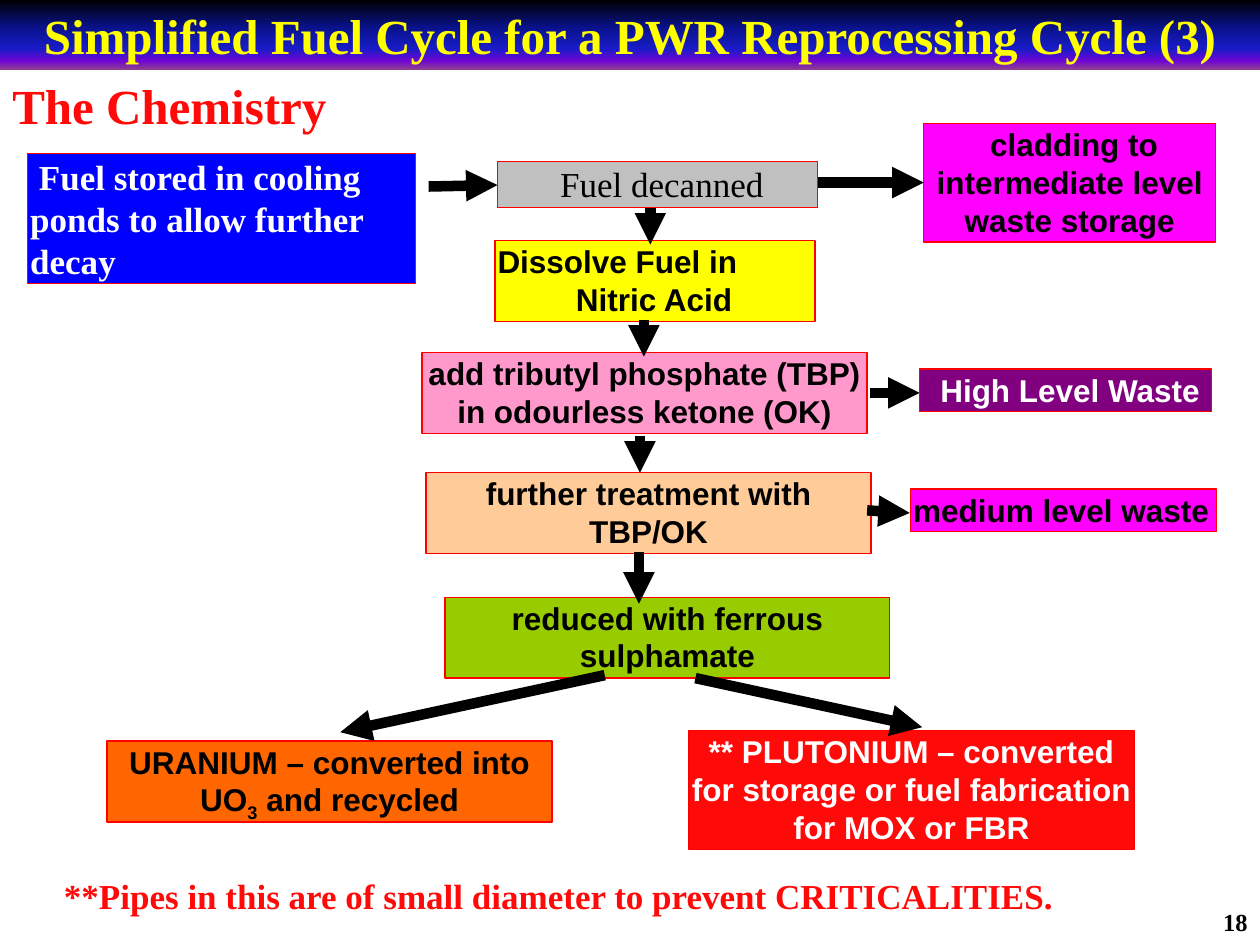
import pptx
import pptx.dml.color
import pptx.enum.shapes
import pptx.enum.text
import pptx.oxml
import pptx.oxml.ns
import pptx.util

Cm = pptx.util.Cm
Pt = pptx.util.Pt
RGBColor = pptx.dml.color.RGBColor
Align = pptx.enum.text.PP_ALIGN

BLACK = RGBColor(0x00, 0x00, 0x00)
WHITE = RGBColor(0xFF, 0xFF, 0xFF)
RED = RGBColor(0xFF, 0x00, 0x00)
BRIGHT_RED = RGBColor(0xFF, 0x09, 0x09)
YELLOW = RGBColor(0xFF, 0xFF, 0x00)
BLUE = RGBColor(0x00, 0x00, 0xFF)
GREY = RGBColor(0xC0, 0xC0, 0xC0)
MAGENTA = RGBColor(0xFF, 0x00, 0xFF)
PINK = RGBColor(0xFF, 0x99, 0xCC)
PEACH = RGBColor(0xFF, 0xCC, 0x99)
GREEN = RGBColor(0x99, 0xCC, 0x00)
PURPLE = RGBColor(0x80, 0x00, 0x80)
ORANGE = RGBColor(0xFF, 0x66, 0x00)
BANNER_STOPS = [
    (0, RGBColor(0x00, 0x00, 0x00)),
    (40, RGBColor(0x0A, 0x12, 0x8C)),
    (70, RGBColor(0x18, 0x1C, 0xC7)),
    (88, RGBColor(0x70, 0x05, 0xD4)),
    (100, RGBColor(0x8C, 0x3D, 0x91)),
]

SERIF = "Times New Roman"
SANS = "Arial"
STEP_WIDTH, STEP_HEIGHT = 8.97, 1.63


class FlowPage:
    """Holds the style and the slide being drawn."""

    def __init__(self, deck):
        self.page = deck.slides.add_slide(deck.slide_layouts[5])

    def style(self, para, size, color, name=SANS, bold=True, align=Align.CENTER):
        para.alignment = align
        para.font.size = Pt(size)
        para.font.name = name
        para.font.bold = bold
        para.font.color.rgb = color

    def title(self, text, height):
        box = self.page.shapes.title
        box.left, box.top, box.width, box.height = Cm(0), Cm(0), Cm(25.4), Cm(height)
        stops = "".join(
            f'<a:gs pos="{position * 1000}"><a:srgbClr val="{color}"/></a:gs>'
            for position, color in BANNER_STOPS
        )
        box._element.spPr.append(pptx.oxml.parse_xml(
            f'<a:gradFill {pptx.oxml.ns.nsdecls("a")}><a:gsLst>{stops}</a:gsLst>'
            '<a:lin ang="5400000" scaled="1"/></a:gradFill>'
        ))
        frame = box.text_frame
        frame.text = text
        frame.auto_size = pptx.enum.text.MSO_AUTO_SIZE.NONE
        frame.vertical_anchor = pptx.enum.text.MSO_ANCHOR.MIDDLE
        self.style(frame.paragraphs[0], 28, YELLOW, SERIF)

    def label(self, text, left, top, width, height, size, color, align=Align.LEFT):
        box = self.page.shapes.add_textbox(Cm(left), Cm(top), Cm(width), Cm(height))
        box.text_frame.word_wrap = True
        box.text_frame.text = text
        self.style(box.text_frame.paragraphs[0], size, color, SERIF, align=align)

    def step(self, text, fill, left, top, width=STEP_WIDTH, height=STEP_HEIGHT,
             color=BLACK, size=18, **style):
        box = self.page.shapes.add_shape(
            pptx.enum.shapes.MSO_SHAPE.RECTANGLE,
            Cm(left), Cm(top), Cm(width), Cm(height))
        box.shadow.inherit = False
        box.fill.solid()
        box.fill.fore_color.rgb = fill
        box.line.color.rgb = RED
        box.line.width = Pt(0.75)
        frame = box.text_frame
        frame.word_wrap = True
        frame.auto_size = pptx.enum.text.MSO_AUTO_SIZE.SHAPE_TO_FIT_TEXT
        frame.vertical_anchor = pptx.enum.text.MSO_ANCHOR.TOP
        frame.margin_left = frame.margin_right = Cm(0.05)
        frame.margin_top = frame.margin_bottom = Cm(0.03)
        frame.text = text
        for para in frame.paragraphs:
            self.style(para, size, color, **style)
        return frame

    def arrow(self, start_x, start_y, end_x, end_y):
        line = self.page.shapes.add_connector(
            pptx.enum.shapes.MSO_CONNECTOR.STRAIGHT,
            Cm(start_x), Cm(start_y), Cm(end_x), Cm(end_y))
        line.line.color.rgb = BLACK
        line.line.width = Pt(6)
        namespace = pptx.oxml.ns.nsdecls("a")
        line.line._get_or_add_ln().append(
            pptx.oxml.parse_xml(f'<a:tailEnd {namespace} type="triangle"/>'))
        line._element.spPr.append(pptx.oxml.parse_xml(f"<a:effectLst {namespace}/>"))


def main():
    deck = pptx.Presentation()
    deck.slide_width, deck.slide_height = Cm(25.4), Cm(19.05)
    flow = FlowPage(deck)

    # Headings, footnote and page number
    flow.title("Simplified Fuel Cycle for a PWR Reprocessing Cycle (3)", 1.4)
    flow.label("The Chemistry", 0, 1.4, 7.2, 1.68, 28, BRIGHT_RED)
    flow.label("**Pipes in this are of small diameter to prevent CRITICALITIES.",
               1.04, 17.5, 23.5, 1.12, 20, BRIGHT_RED)
    flow.label("18", 19.48, 18.16, 5.92, 0.85, 14, BLACK, Align.RIGHT)

    # Fuel preparation
    flow.step(" Fuel stored in cooling ponds to allow further decay", BLUE,
              0.56, 3.1, 7.82, 2.62, WHITE, 20, name=SERIF, align=Align.LEFT)
    flow.step(" Fuel decanned", GREY, 10.03, 3.25, 6.45, 0.94,
              size=20, name=SERIF, bold=False)
    dissolve = flow.step("Dissolve Fuel in\nNitric Acid", YELLOW,
                         9.98, 4.85, 6.45, align=Align.LEFT)
    dissolve.paragraphs[1]._p.get_or_add_pPr().set("marL", str(Cm(1.58)))

    # Chemical separation
    flow.step("add tributyl phosphate (TBP) in odourless ketone (OK)", PINK, 8.51, 7.11)
    flow.step("further treatment with TBP/OK", PEACH, 8.59, 9.53)
    flow.step("reduced with ferrous sulphamate", GREEN, 8.97, 12.04)

    # Waste streams
    flow.step(" cladding to intermediate level waste storage", MAGENTA,
              18.62, 2.49, 5.89, 2.39)
    flow.step(" High Level Waste", PURPLE, 18.54, 7.44, 5.89, 0.86, WHITE)
    flow.step("medium level waste", MAGENTA, 18.36, 9.86, 6.17, 0.86, align=Align.LEFT)

    # Products
    uranium = flow.step("URANIUM – converted into UO", ORANGE, 2.16, 14.94).paragraphs[0]
    subscript = uranium.add_run()
    subscript.text = "3"
    subscript.font._element.set("baseline", "-25000")
    uranium.add_run().text = " and recycled"
    flow.step("** PLUTONIUM – converted for storage or fuel fabrication for MOX or FBR",
              BRIGHT_RED, 13.89, 14.73, height=2.39, color=WHITE)

    # Arrows: down the main line, out to the wastes, then to the products
    for x, top, bottom in [(13.11, 4.19, 4.93), (12.98, 6.45, 7.19),
                           (12.9, 8.79, 9.53), (12.88, 11.13, 12.17)]:
        flow.arrow(x, top, x, bottom)
    for ends in [(8.64, 3.76, 10.03, 3.73), (16.48, 3.68, 18.62, 3.68),
                 (17.53, 7.92, 18.54, 7.92), (17.48, 10.29, 18.34, 10.34),
                 (12.19, 13.61, 6.86, 14.76), (14.02, 13.67, 18.59, 14.66)]:
        flow.arrow(*ends)

    deck.save("out.pptx")


if __name__ == "__main__":
    main()
